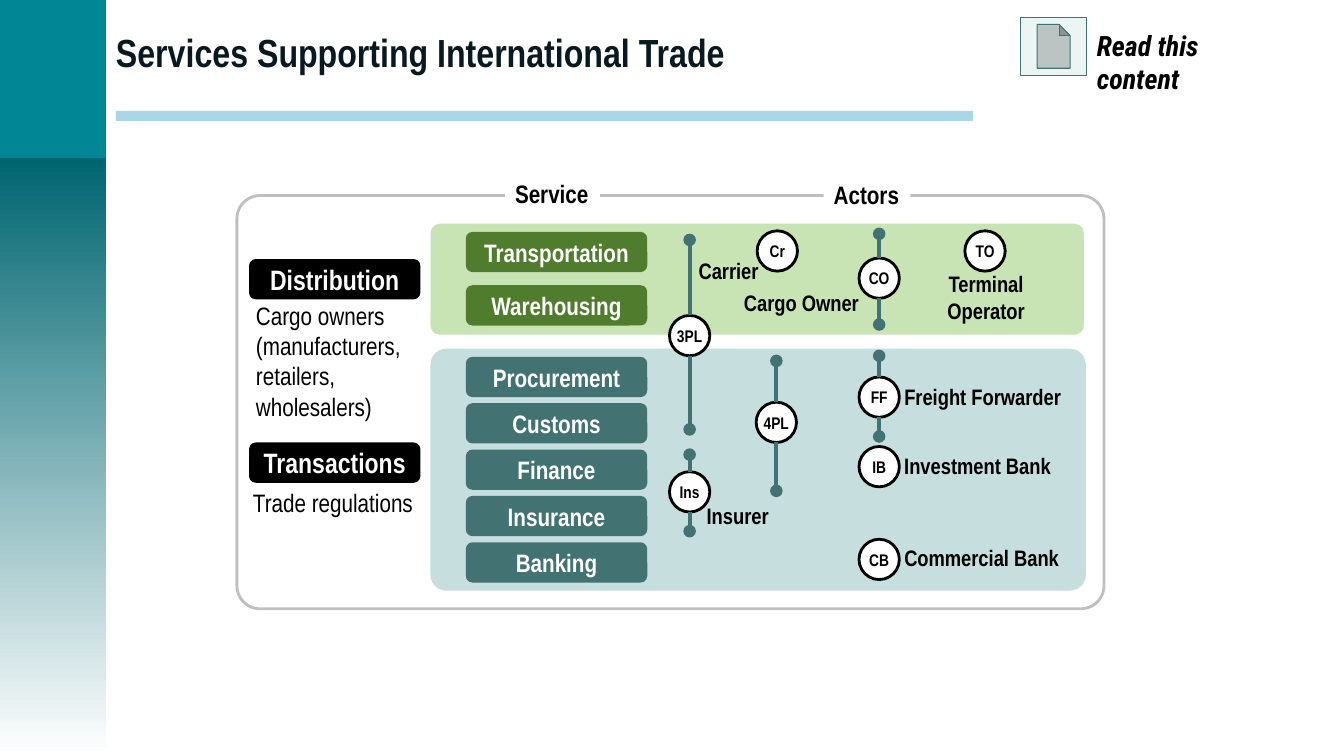
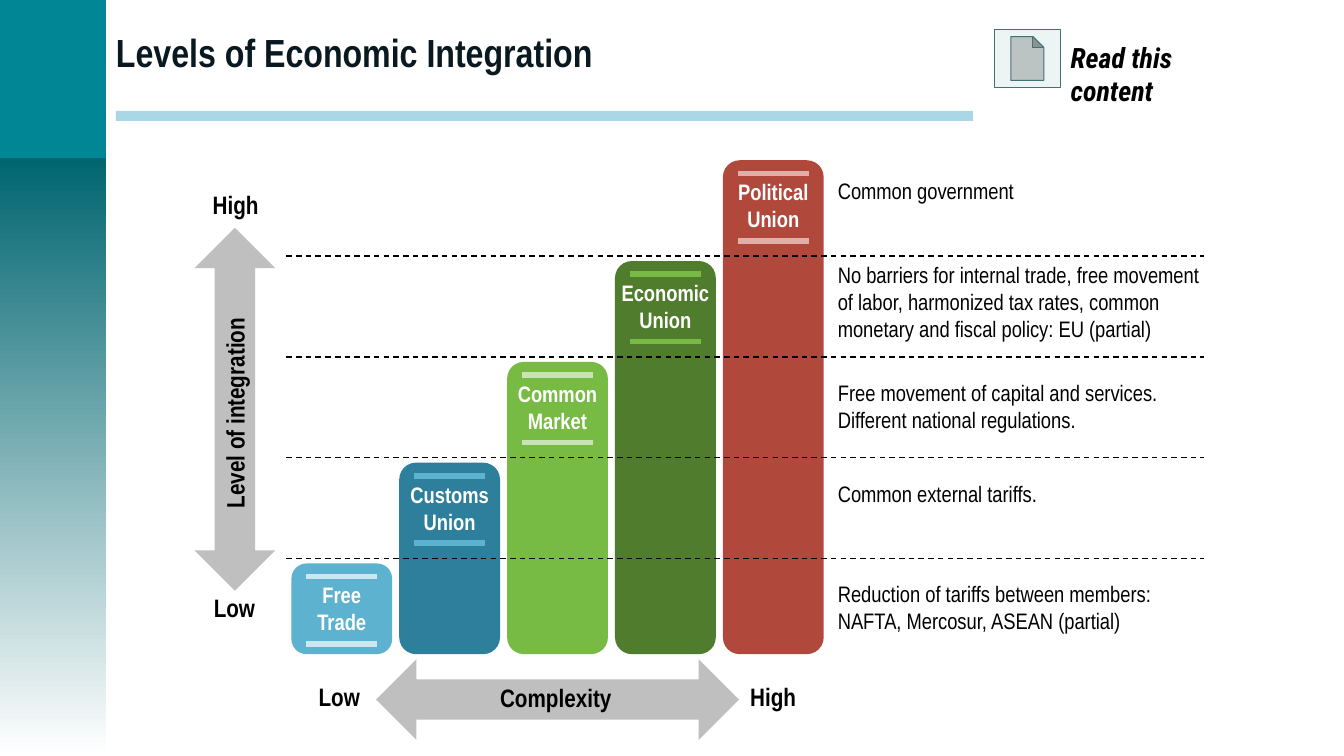
from lxml import etree
from pptx import Presentation
from pptx.dml.color import RGBColor
from pptx.enum import dml, shapes, text
from pptx.oxml import ns
from pptx.util import Inches, Pt

COLORS = {
    "black": "000000", "white": "FFFFFF", "title": "09191F",
    "band": "008695", "fade": "006570", "rule": "AAD7E6",
    "teal": "427272", "mist": "C6DEDE", "icon": "ECF4F4",
    "forest": "507D2D", "leaf": "78BB44", "mint": "C9E4B4",
    "ocean": "2D7F9B", "sky": "5DB3CF", "ice": "CCE7F0",
    "brick": "B1483C", "rose": "E2AEA8", "gray": "BFBFBF",
}
FONT = "Arial Narrow"
KIND = shapes.MSO_SHAPE
LEFT, CENTER = text.PP_ALIGN.LEFT, text.PP_ALIGN.CENTER
TOP, MIDDLE = text.MSO_ANCHOR.TOP, text.MSO_ANCHOR.MIDDLE


def color(name):
    return RGBColor.from_string(COLORS[name])


def write(box, lines, size, ink="black", bold=True, italic=False, font=FONT,
          align=LEFT, anchor=TOP, wrap=True, inset=None):
    frame = box.text_frame
    frame.word_wrap = wrap
    frame.auto_size = text.MSO_AUTO_SIZE.NONE
    frame.vertical_anchor = anchor
    if inset is not None:
        frame.margin_left = frame.margin_right = Inches(inset)
        frame.margin_top = frame.margin_bottom = Inches(inset)
    for number, line in enumerate(lines.split("\n")):
        para = frame.add_paragraph() if number else frame.paragraphs[0]
        para.alignment = align
        span = para.add_run()
        span.text = line
        span.font.name = font
        span.font.size = Pt(size)
        span.font.bold = bold
        span.font.italic = italic
        span.font.color.rgb = color(ink)


def add_label(page, lines, left, top, width, height, size, **style):
    box = page.shapes.add_textbox(
        Inches(left), Inches(top), Inches(width), Inches(height))
    write(box, lines, size, **style)
    return box


def add_figure(page, kind, left, top, width, height, fill=None, line=None,
               weight=1, corner=None):
    figure = page.shapes.add_shape(
        kind, Inches(left), Inches(top), Inches(width), Inches(height))
    figure.shadow.inherit = False
    if fill:
        figure.fill.solid()
        figure.fill.fore_color.rgb = color(fill)
    else:
        figure.fill.background()
    if line:
        figure.line.color.rgb = color(line)
        figure.line.width = Pt(weight)
    else:
        figure.line.fill.background()
    if corner is not None:
        figure.adjustments[0] = corner
    return figure


def add_pill(page, lines, left, top, width, fill, size):
    pill = add_figure(page, KIND.ROUNDED_RECTANGLE, left, top, width, 0.4, fill)
    write(pill, lines, size, "white", align=CENTER, anchor=MIDDLE)


def add_line(page, start, end, ink, weight, dashed=False, dot=False):
    line = page.shapes.add_connector(
        shapes.MSO_CONNECTOR.STRAIGHT, *map(Inches, start + end))
    line.line.color.rgb = color(ink)
    line.line.width = Pt(weight)
    if dashed:
        line.line.dash_style = dml.MSO_LINE.DASH
    properties = line._element.spPr
    if dot:
        outline = properties.find(ns.qn("a:ln"))
        etree.SubElement(outline, ns.qn("a:tailEnd"), type="oval")
    etree.SubElement(properties, ns.qn("a:effectLst"))


def add_actor(page, code, x, y, reach=()):
    radius = 0.2
    badge = add_figure(page, KIND.OVAL, x - radius, y - radius,
                       2 * radius, 2 * radius, "white", "black", 2)
    write(badge, code, 12, align=CENTER, anchor=MIDDLE, inset=0)
    for end in reach:
        edge = y + radius if end > y else y - radius
        add_line(page, (x, edge), (x, end), "teal", 3, dot=True)


def decorate_layout(layout, page):
    fade = add_figure(page, KIND.RECTANGLE, -0.02, 1.57, 1.07, 5.93, "fade")
    fade.fill.gradient()
    fade.fill.gradient_angle = 270
    for stop, name in zip(fade.fill.gradient_stops, ("fade", "white")):
        stop.color.rgb = color(name)
    band = add_figure(page, KIND.RECTANGLE, -0.02, -0.01, 1.07, 1.58, "band")
    rule = add_figure(page, KIND.RECTANGLE, 1.15, 1.1, 8.5, 0.1, "rule")
    for part in (fade, band, rule):
        layout.shapes._spTree.append(part._element)


def add_header(page, title, left, top):
    box = page.shapes.title
    box.left, box.top = Inches(1.05), Inches(0.01)
    box.width, box.height = Inches(11.98), Inches(1)
    write(box, title, 28, "title", anchor=MIDDLE)
    add_figure(page, KIND.ACTION_BUTTON_DOCUMENT, left, top, 0.66, 0.58,
               "icon", "teal", 0.75)
    add_label(page, "Read this content", left + 0.66, top + 0.06, 1.86, 0.44,
              20, italic=True, font="Roboto Condensed")


def build_services(page):
    add_header(page, "Services Supporting International Trade", 10.12, 0.17)

    panel = KIND.ROUNDED_RECTANGLE
    add_figure(page, panel, 4.27, 3.46, 6.5, 2.4, "mist", corner=0.065)
    add_figure(page, panel, 4.27, 2.22, 6.48, 1.1, "mint", corner=0.083)
    add_figure(page, panel, 2.35, 1.94, 8.6, 4.1, None, "gray", 2, 0.056)

    for heading, left, top, width in (
            ("Service", 5.01, 1.72, 0.94), ("Actors", 8.17, 1.73, 0.86)):
        box = add_figure(page, KIND.RECTANGLE, left, top, width, 0.4, "white")
        write(box, heading, 18, wrap=False)

    add_pill(page, "Distribution", 2.47, 2.57, 1.7, "black", 20)
    add_label(page, "Cargo owners (manufacturers, retailers, wholesalers)",
              2.44, 2.93, 1.81, 1.31, 18, bold=False)
    add_pill(page, "Transactions", 2.47, 4.39, 1.7, "black", 20)
    add_label(page, "Trade regulations", 2.41, 4.79, 1.81, 0.4, 18,
              bold=False, wrap=False)

    for services, top, pitch, fill in (
            (("Transportation", "Warehousing"), 2.3, 0.53, "forest"),
            (("Procurement", "Customs", "Finance", "Insurance", "Banking"),
             3.54, 0.46, "teal")):
        for row, service in enumerate(services):
            add_pill(page, service, 4.62, top + row * pitch, 1.8, fill, 18)

    for name, left, top, width in (
            ("Carrier", 6.83, 2.5, 0.81),
            ("Cargo Owner", 7.28, 2.82, 1.36),
            ("Insurer", 6.91, 4.93, 0.82),
            ("Freight Forwarder", 8.87, 3.75, 1.85),
            ("Investment Bank", 8.87, 4.44, 1.67),
            ("Commercial Bank", 8.87, 5.35, 1.75)):
        add_label(page, name, left, top, width, 0.37, 16, wrap=False)
    add_label(page, "Terminal\nOperator", 9.29, 2.63, 0.98, 0.64, 16,
              align=CENTER, wrap=False)

    for code, x, y, reach in (
            ("3PL", 6.84, 3.33, (2.38, 4.26)),
            ("4PL", 7.7, 4.19, (3.58, 4.87)),
            ("Ins", 6.84, 4.88, (4.51, 5.27)),
            ("Cr", 7.71, 2.49, ()),
            ("CO", 8.72, 2.76, (2.32, 3.22)),
            ("TO", 9.77, 2.49, ()),
            ("FF", 8.72, 3.94, (3.53, 4.33)),
            ("IB", 8.72, 4.63, ()),
            ("CB", 8.72, 5.55, ())):
        add_actor(page, code, x, y, reach)


def build_integration(page):
    add_header(page, "Levels of Economic Integration", 9.86, 0.29)
    add_figure(page, KIND.LEFT_RIGHT_ARROW, 3.73, 6.54, 3.6, 0.8, "gray")
    add_figure(page, KIND.UP_DOWN_ARROW, 1.93, 2.26, 0.8, 3.6, "gray")

    levels = (
        ("Free\nTrade", "sky", "ice", 0.17,
         "Reduction of tariffs between members: "
         "NAFTA, Mercosur, ASEAN (partial)"),
        ("Customs\nUnion", "ocean", "sky", 0.17, "Common external tariffs."),
        ("Common\nMarket", "leaf", "mint", 0.17,
         "Free movement of capital and services. "
         "Different national regulations."),
        ("Economic\nUnion", "forest", "leaf", 0,
         "No barriers for internal trade, free movement of labor, "
         "harmonized tax rates, common monetary and fiscal policy: "
         "EU (partial)"),
        ("Political\nUnion", "brick", "rose", 0.17, "Common government"),
    )
    base = 6.49
    for step, (name, fill, accent, offset, detail) in enumerate(levels):
        left = 2.89 + 1.07 * step
        height = 0.9 + step
        top = base - height
        add_figure(page, KIND.ROUNDED_RECTANGLE, left, top, 1, height, fill)
        add_label(page, name, left, top + 0.18, 1, 0.54, 16, ink="white",
                  align=CENTER, inset=0)
        for drop in (0.13, 0.8):
            add_line(page, (left + 0.15, top + drop),
                     (left + 0.85, top + drop), accent, 4)
        add_label(page, detail, 8.31, top + offset, 3.67, 0.81, 16,
                  bold=False, inset=0)

    for step in range(len(levels) - 1):
        y = 5.54 - step
        add_line(page, (2.84, y), (11.94, y), "black", 1, dashed=True)

    for caption, left, top, width in (
            ("Complexity", 4.96, 6.77, 1.12),
            ("Low", 3.16, 6.76, 0.41), ("High", 7.44, 6.76, 0.46),
            ("High", 2.11, 1.88, 0.46), ("Low", 2.12, 5.88, 0.41)):
        add_label(page, caption, left, top, width, 0.3, 18,
                  wrap=False, inset=0)
    axis = add_label(page, "Level of integration", 1.37, 3.94, 1.91, 0.3, 18,
                     wrap=False, inset=0)
    axis.rotation = 270


def main():
    deck = Presentation()
    deck.slide_width, deck.slide_height = Inches(13.33), Inches(7.5)
    layout = deck.slide_layouts[5]
    pages = [deck.slides.add_slide(layout) for _ in range(2)]
    decorate_layout(layout, pages[0])
    build_services(pages[0])
    build_integration(pages[1])
    deck.save("out.pptx")


if __name__ == "__main__":
    main()
